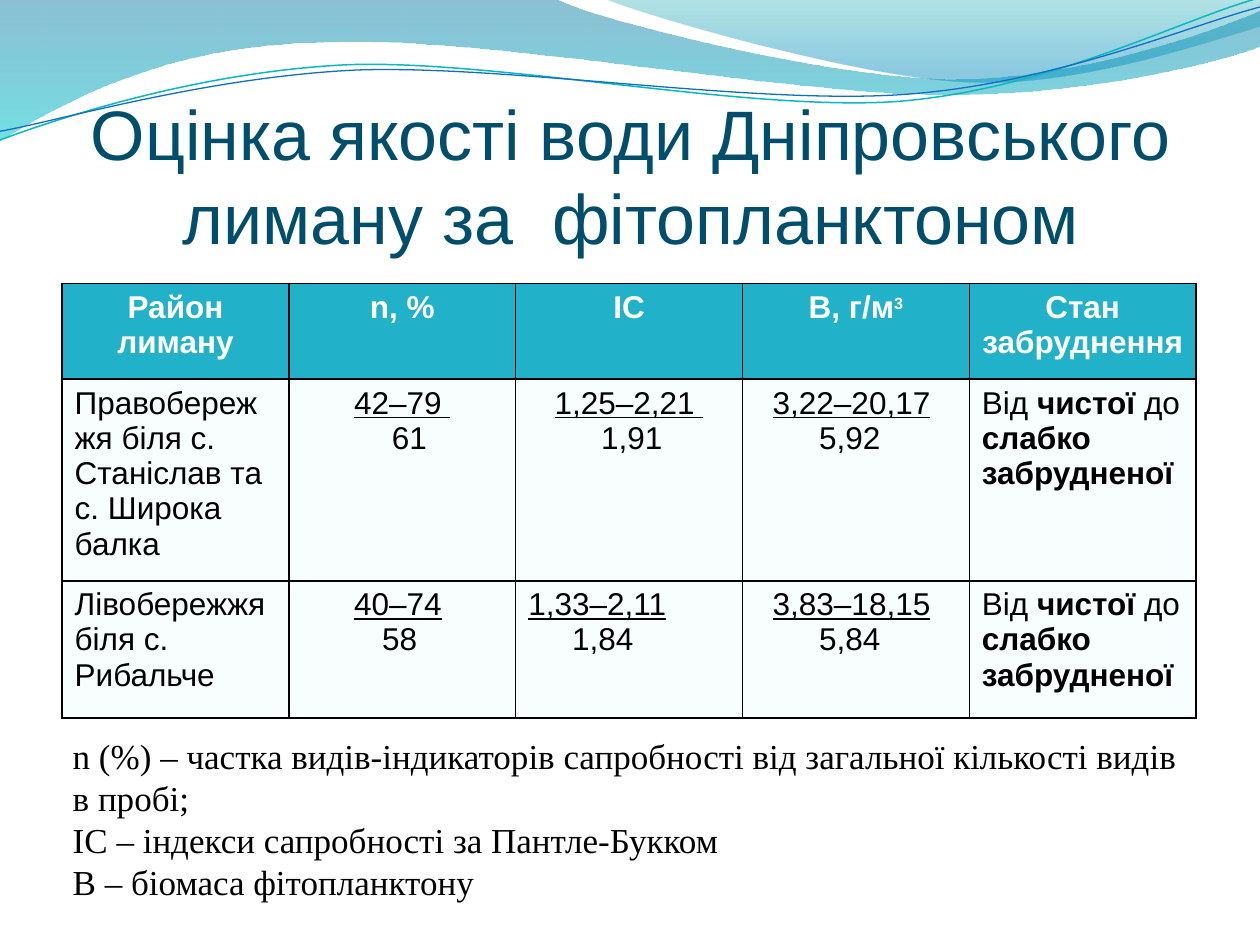
from dataclasses import dataclass

from lxml import etree
from pptx import Presentation
from pptx.dml.color import RGBColor
from pptx.enum import text
from pptx.oxml import ns
from pptx.util import Pt


@dataclass(frozen=True)
class Theme:
    title: str = "004E6C"
    header: str = "21B2C9"
    body: str = "F8FDFE"
    white: str = "FFFFFF"
    black: str = "000000"
    teal: str = "0AB8BF"
    blue: str = "0F6FC6"
    sans: str = "Arial"
    serif: str = "Times New Roman"
    title_size: int = 40
    note_size: int = 20
    cell_size: int = 18
    super_size: int = 16


theme = Theme()


def add_wave(slide, start, segments, close):
    points = [pt for seg in segments for pt in seg]
    fb = slide.shapes.build_freeform(*start, scale=Pt(1))
    fb.add_line_segments(points, close=close)
    sp = fb.convert_to_shape()
    sp.shadow.inherit = False
    steps = sp._element.findall(".//" + ns.qn("a:lnTo"))
    for seg in segments:
        group, steps = steps[:len(seg)], steps[len(seg):]
        if len(seg) == 3:
            curve = etree.Element(ns.qn("a:cubicBezTo"))
            group[0].addprevious(curve)
            for step in group:
                curve.append(step[0])
                step.getparent().remove(step)
    return sp


def add_run(p, words, font, size, color, style=""):
    r = p.add_run()
    r.text = words
    r.font.name = font
    r.font.size = Pt(size)
    r.font.color.rgb = RGBColor.from_string(color)
    r.font.bold = "b" in style
    r.font.underline = "u" in style
    return r


prs = Presentation()
prs.slide_width, prs.slide_height = Pt(720), Pt(540)
s = prs.slides.add_slide(prs.slide_layouts[6])

bands = [
    ((0, -0.7), [
        [(316.8, -0.7)],
        [(342.7, 12.2), (478.1, 45.4), (545.8, 45.4)],
        [(614.2, 45.4), (689.8, 18.7), (720, 6.5)],
        [(720.7, 25.9)],
        [(707.8, 31.7), (626.4, 54.7), (537.1, 54)],
        [(447.8, 54), (275, 20.2), (185, 24.5)],
        [(92.9, 25.2), (33.1, 59.8), (-0.7, 81.4)],
    ], [(0, "0074A1", 45), (1, "00C6CF", 55)]),
    ((344.9, -0.7), [
        [(366.5, 7.9), (491, 44.6), (553.7, 46.8)],
        [(616.3, 49.7), (691.9, 23), (720, 15.1)],
        [(720, 0)],
    ], [(0, "00A1A9", 30), (0.8, "008BBF", 45)]),
]
for start, segments, stops in bands:
    sp = add_wave(s, start, segments, True)
    sp.line.fill.background()
    sp.fill.gradient()
    sp.fill.gradient_angle = 270
    for stop, (position, color, opacity) in zip(sp.fill.gradient_stops, stops):
        stop.position = position
        stop.color.rgb = RGBColor.from_string(color)
        rgb = stop._gs.find(ns.qn("a:srgbClr"))
        etree.SubElement(rgb, ns.qn("a:alpha"), val=str(opacity * 1000))

strands = [
    ((0, 79.9), [
        [(34.6, 67), (113.8, 41), (199.4, 37.4)],
        [(284.4, 33.8), (427, 64.1), (513.4, 57.6)],
        [(599.8, 51.1), (675.4, 10.8), (718.6, -1.4)],
    ], theme.teal, 0.85),
    ((0, 74.9), [
        [(33.8, 69.1), (118.1, 43.9), (203.8, 40.3)],
        [(290.2, 36.7), (429.8, 59.8), (516.2, 54)],
        [(601.9, 48.2), (677.5, 15.1), (720, 4.3)],
    ], theme.blue, 0.75),
]
for start, segments, color, width in strands:
    sp = add_wave(s, start, segments, False)
    sp.fill.background()
    sp.line.color.rgb = RGBColor.from_string(color)
    sp.line.width = Pt(width)

left, center = text.PP_ALIGN.LEFT, text.PP_ALIGN.CENTER
headers = [[("Район лиману", "b")], [("n, %", "b")], [("ІС", "b")],
           [("В, г/м", "b"), ("3", "b^")], [("Стан забруднення", "b")]]
state = [(left, 0, 0, [("Від ", ""), ("чистої ", "b"), ("до ", ""),
                       ("слабко забрудненої", "b")])]
rows = [
    [[(center, 0, 0, runs)] for runs in headers],
    [
        [(left, 0, 0, [("Правобережжя біля с. Станіслав та с. Широка балка", "")])],
        [(center, 0, 0, [("42–79 ", "u")]), (center, 8, 0, [("61", "")])],
        [(center, 0, 0, [("1,25–2,21 ", "u")]), (center, 3, 0, [("1,91", "")])],
        [(center, 0, 0, [("3,22–20,17", "u"), (" ", "")]), (center, 0, 7, [("5,92", "")])],
        state,
    ],
    [
        [(left, 0, 0, [("Лівобережжя біля с. Рибальче", "")])],
        [(center, 0, 0, [("40–74", "u"), (" ", "")]), (center, 0, 3, [("58", "")])],
        [(left, 0, 0, [("1,33–2,11", "u")]), (left, 25, 0, [("1,84", "")])],
        [(center, 0, 0, [("3,83–18,15", "u"), (" ", "")]), (center, 0, 7, [("5,84", "")])],
        state,
    ],
]
heights = [54.7, 115.2, 78.5]
frame = s.shapes.add_table(len(rows), 5, Pt(35.5), Pt(162), Pt(648), Pt(sum(heights)))
table = frame.table
for column in table.columns:
    column.width = Pt(648 / 5)
for i, (row, height) in enumerate(zip(rows, heights)):
    table.rows[i].height = Pt(height)
    fill, ink = (theme.body, theme.black) if i else (theme.header, theme.white)
    for j, paragraphs in enumerate(row):
        cell = table.cell(i, j)
        tf = cell.text_frame
        for k, (align, indent, right, runs) in enumerate(paragraphs):
            p = tf.add_paragraph() if k else tf.paragraphs[0]
            p.alignment = align
            pPr = p._p.get_or_add_pPr()
            pPr.set("marL", str(Pt(indent)))
            pPr.set("marR", str(Pt(right)))
            for words, style in runs:
                raised = "^" in style
                size = theme.super_size if raised else theme.cell_size
                r = add_run(p, words, theme.sans, size, ink, style)
                if raised:
                    r.font._element.set("baseline", "30000")
        tcPr = cell._tc.get_or_add_tcPr()
        for side in ("lnL", "lnR", "lnT", "lnB"):
            ln = etree.SubElement(tcPr, ns.qn("a:" + side), w=str(Pt(1)))
            solid = etree.SubElement(ln, ns.qn("a:solidFill"))
            etree.SubElement(solid, ns.qn("a:srgbClr"), val=theme.black)
        cell.fill.solid()
        cell.fill.fore_color.rgb = RGBColor.from_string(fill)

notes = [
    "n (%) – частка видів-індикаторів сапробності від загальної кількості видів в пробі;",
    "ІС – індекси сапробності за Пантле-Букком",
    "В – біомаса фітопланктону",
]
tf = s.shapes.add_textbox(Pt(34.5), Pt(416), Pt(651), Pt(104.5)).text_frame
tf.word_wrap = True
tf.auto_size = text.MSO_AUTO_SIZE.SHAPE_TO_FIT_TEXT
for k, note in enumerate(notes):
    p = tf.add_paragraph() if k else tf.paragraphs[0]
    add_run(p, note, theme.serif, theme.note_size, theme.black)

tf = s.shapes.add_textbox(Pt(36.5), Pt(54.7), Pt(648), Pt(90)).text_frame
tf.word_wrap = True
tf.vertical_anchor = text.MSO_ANCHOR.MIDDLE
p = tf.paragraphs[0]
p.alignment = center
add_run(p, "Оцінка якості води Дніпровського лиману за  фітопланктоном",
        theme.sans, theme.title_size, theme.title)

prs.save("out.pptx")
